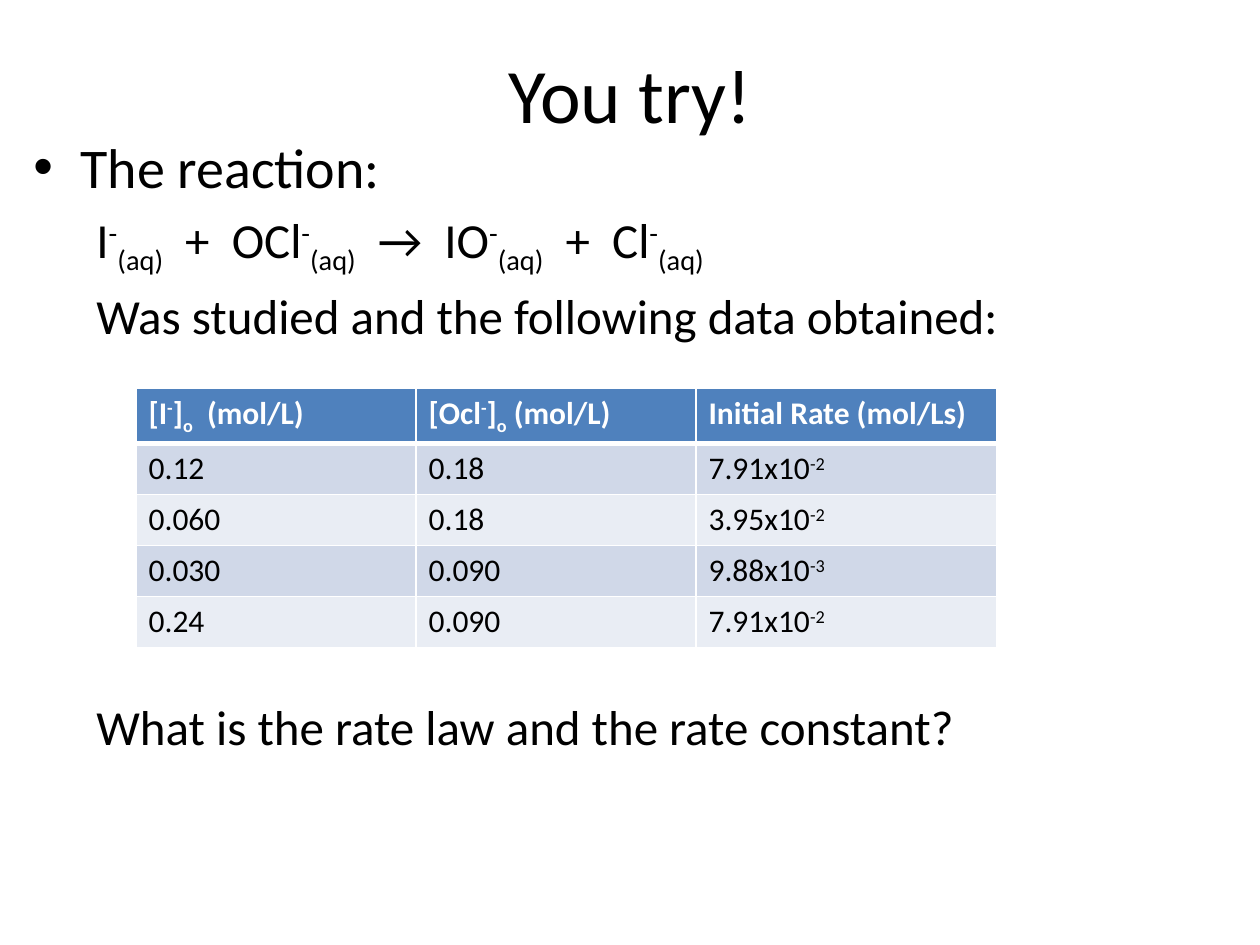
from pptx import Presentation
from pptx.util import Pt
from pptx.dml.color import RGBColor
from pptx.enum.text import MSO_ANCHOR, PP_ALIGN
from pptx.oxml.ns import qn
from lxml import etree

MID, TOP = MSO_ANCHOR.MIDDLE, MSO_ANCHOR.TOP
CENTER, LEFT = PP_ALIGN.CENTER, PP_ALIGN.LEFT
PX = 914400 // 126

# Content: "|" parts the runs, "^" raises a run, "_" lowers it
TITLE = "You try!"
LEAD = "The reaction:"
LINES = [  # text, space before in points
    ("I|^-|_(aq)|  +  OCl|^-|_(aq)|  →  IO|^-|_(aq)|  +  Cl|^-|_(aq)", 5.6),
    ("Was studied and the following data obtained:", 5.6),
    ("What is the rate law and the rate constant?", 201),
]
ROWS = [
    ("[I|^-|]|_o|  (mol/L)", "[Ocl|^-|]|_o| (mol/L)", "Initial Rate (mol/Ls)"),
    ("0.12", "0.18", "7.91x10|^-2"),
    ("0.060", "0.18", "3.95x10|^-2"),
    ("0.030", "0.090", "9.88x10|^-3"),
    ("0.24", "0.090", "7.91x10|^-2"),
]
COLS, ROW = (280, 280, 301), 51


class Theme:
    font = "Calibri"
    ink, white, head = "000000", "FFFFFF", "4F81BD"
    bands = ("E9EDF4", "D0D8E8")
    title, lead, line, cell = 44, 32, 28, 18


SHIFT = {"^": "30000", "_": "-25000"}


def write(para, text, size, color=Theme.ink, bold=False):
    for part in text.split("|"):
        run = para.add_run()
        shift = SHIFT.get(part[0])
        run.text = part[1:] if shift else part
        font = run.font
        font.name, font.size, font.bold = Theme.font, Pt(size), bold
        font.color.rgb = RGBColor.from_string(color)
        if shift:
            run._r.get_or_add_rPr().set("baseline", shift)


def box(slide, x, y, w, h, anchor):
    frame = slide.shapes.add_textbox(x * PX, y * PX, w * PX, h * PX).text_frame
    frame.word_wrap = True
    frame.vertical_anchor = anchor
    return frame


def indent(para, left, first, bullet=None):
    props = para._p.get_or_add_pPr()
    props.set("marL", str(left * PX))
    props.set("indent", str(first * PX))
    if bullet:
        etree.SubElement(props, qn("a:buFont"), typeface="Arial")
        etree.SubElement(props, qn("a:buChar"), char=bullet)


def border(cell, widths):
    props = cell._tc.get_or_add_tcPr()
    for side, width in zip("LRTB", widths):
        line = etree.SubElement(props, qn("a:ln" + side), w=str(Pt(width)))
        fill = etree.SubElement(line, qn("a:solidFill"))
        etree.SubElement(fill, qn("a:srgbClr"), val=Theme.white)


def main():
    deck = Presentation()
    deck.slide_width, deck.slide_height = 1260 * PX, 945 * PX
    slide = deck.slides.add_slide(deck.slide_layouts[6])

    # Title
    para = box(slide, 63, 38, 1134, 110, MID).paragraphs[0]
    para.alignment = CENTER
    write(para, TITLE, Theme.title)

    # Body text
    body = box(slide, 21, 126, 1218, 798, TOP)
    para = body.paragraphs[0]
    para.alignment = LEFT
    indent(para, 47, -47, "•")
    write(para, LEAD, Theme.lead)
    for text, gap in LINES:
        para = body.add_paragraph()
        para.level = 1
        para.space_before = Pt(gap)
        indent(para, 63, 0)
        write(para, text, Theme.line)

    # Data table
    table = slide.shapes.add_table(
        len(ROWS), len(COLS), 136 * PX, 388 * PX,
        sum(COLS) * PX, len(ROWS) * ROW * PX).table
    for col, width in zip(table.columns, COLS):
        col.width = width * PX
    for r, row in enumerate(ROWS):
        table.rows[r].height = ROW * PX
        head = r == 0
        fill = Theme.head if head else Theme.bands[r % 2]
        for c, text in enumerate(row):
            cell = table.cell(r, c)
            border(cell, (1, 1, 3 if r == 1 else 1, 3 if head else 1))
            cell.fill.solid()
            cell.fill.fore_color.rgb = RGBColor.from_string(fill)
            write(cell.text_frame.paragraphs[0], text, Theme.cell,
                  Theme.white if head else Theme.ink, head)

    deck.save("out.pptx")


if __name__ == "__main__":
    main()
